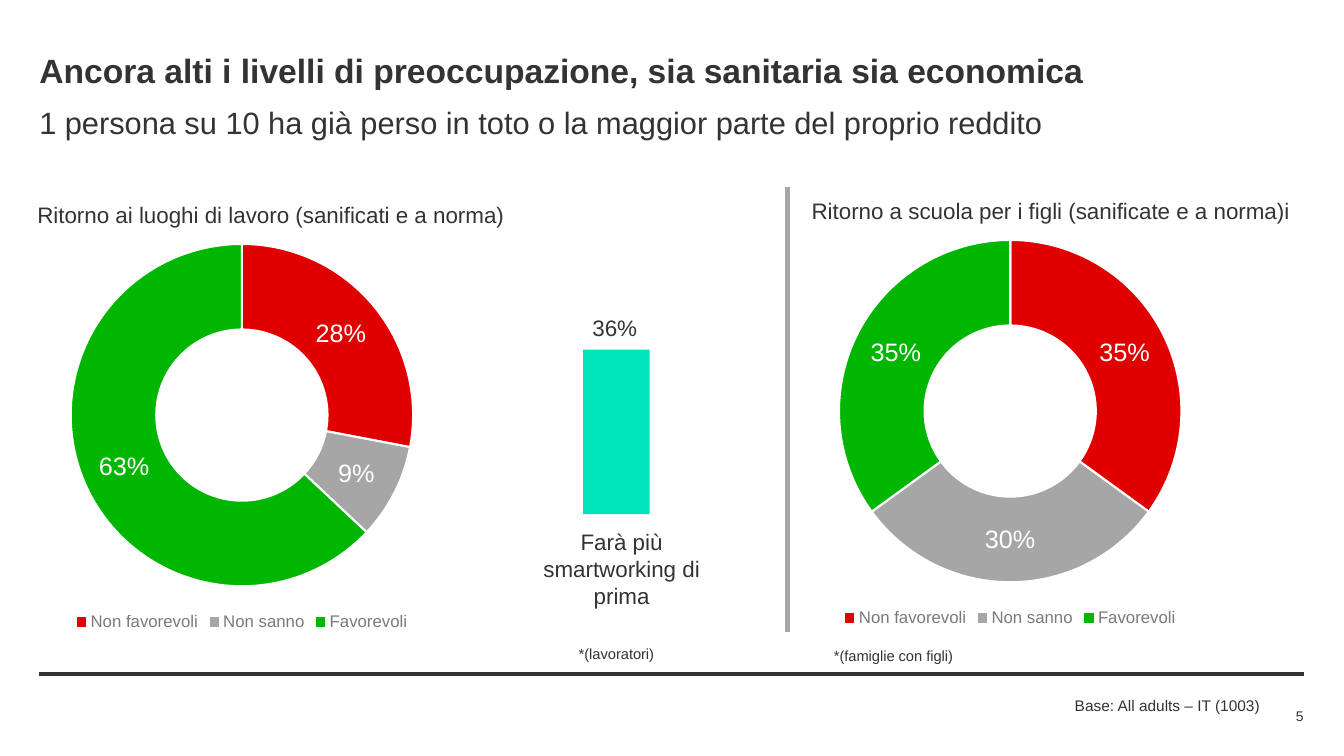
from lxml import etree
from pptx import Presentation
from pptx.chart.data import CategoryChartData as ChartData
from pptx.dml.color import RGBColor
from pptx.enum.chart import XL_CHART_TYPE as Kind, XL_LEGEND_POSITION as Place
from pptx.enum.shapes import MSO_CONNECTOR as Link, MSO_SHAPE as Form
from pptx.enum.text import MSO_ANCHOR as Anchor, MSO_AUTO_SIZE as Fit, PP_ALIGN as Align
from pptx.oxml import parse_xml
from pptx.oxml.ns import nsdecls, qn
from pptx.util import Inches, Pt

WIDE, HIGH = 13.33, 7.5
EDGE, SPAN = 0.39, 12.54
DARK, GREY, PALE = "333333", "A6A6A6", "7A7A7A"
RED, GREEN, TEAL, WHITE = "E10000", "00B600", "00E5BA", "FFFFFF"
VIEWS = ["Non favorevoli", "Non sanno", "Favorevoli"]


def color(code):
    return RGBColor.from_string(code)


def style(font, size, code=DARK, bold=False):
    font.name, font.size, font.bold = "Arial", Pt(size), bold
    font.color.rgb = color(code)


def fill(item, code):
    item.format.fill.solid()
    item.format.fill.fore_color.rgb = color(code)
    item.format.line.color.rgb = color(WHITE)
    item.format.line.width = Pt(1.5)


def write(shape, words, size, bold=False, align=Align.LEFT, anchor=Anchor.TOP,
          wrap=True, pad=0):
    frame = shape.text_frame
    frame.text = words
    frame.word_wrap = wrap
    frame.auto_size = Fit.NONE if wrap else Fit.SHAPE_TO_FIT_TEXT
    frame.vertical_anchor = anchor
    frame.margin_left = frame.margin_right = Inches(pad)
    frame.margin_top = frame.margin_bottom = Inches(pad / 2)
    para = frame.paragraphs[0]
    para.alignment, para.space_before = align, Pt(0)
    style(para.font, size, bold=bold)


def label(slide, box, words, size, **look):
    shape = slide.shapes.add_textbox(*map(Inches, box))
    write(shape, words, size, **look)


def rule(slide, start, end, code):
    line = slide.shapes.add_connector(Link.STRAIGHT, *map(Inches, start + end))
    line.line.color.rgb = color(code)
    line.line.width = Pt(3)
    etree.SubElement(line._element.spPr, qn("a:effectLst"))


def head(slide, left, top, width):
    title = slide.shapes.title
    title.left, title.top = Inches(left), Inches(top)
    title.width, title.height = Inches(width), Inches(0.44)
    write(title, "Ancora alti i livelli di preoccupazione, sia sanitaria sia economica",
          24, bold=True, anchor=Anchor.MIDDLE)
    label(slide, (left, top + 0.53, width, 0.43),
          "1 persona su 10 ha già perso in toto o la maggior parte del proprio reddito",
          22, anchor=Anchor.MIDDLE)


def ring(slide, left, top, shares):
    data = ChartData(number_format="0%")
    data.categories = VIEWS
    data.add_series("Series 1", shares)
    chart = slide.shapes.add_chart(
        Kind.DOUGHNUT, *map(Inches, (left, top, 5.36, 4.02)), data).chart
    style(chart.font, 10)
    chart.has_title = False
    chart.has_legend = True
    chart.legend.position = Place.BOTTOM
    chart.legend.include_in_layout = False
    style(chart.legend.font, 12, PALE)

    plot = chart.plots[0]
    plot.vary_by_categories = True
    plot._element.find(qn("c:holeSize")).set("val", "75")
    series = plot.series[0]
    for spot, code in enumerate((RED, GREY, GREEN)):
        fill(series.points[spot], code)
    tags = series.data_labels
    tags.show_value, tags.show_percentage = True, False
    tags.number_format, tags.number_format_is_linked = "0%", False
    style(tags.font, 18, WHITE)

    # Fixed plot area, as shares of the chart
    area = chart._chartSpace.chart.plotArea
    for old in area.findall(qn("c:layout")):
        area.remove(old)
    sides = "".join(f'<c:{key} val="{val}"/>' for key, val in (
        ("layoutTarget", "inner"), ("xMode", "edge"), ("yMode", "edge"),
        ("x", 0.18), ("y", 0.035), ("w", 0.64), ("h", 0.845)))
    area.insert(0, parse_xml(
        f'<c:layout {nsdecls("c")}><c:manualLayout>{sides}</c:manualLayout></c:layout>'))


def panel(slide, left, top, width, words, shift, shares):
    label(slide, (left, top, width, 0.27), words, 16, wrap=False)
    ring(slide, left + shift, top + 0.28, shares)


def column(slide, left, top, width):
    mid = left + width / 2
    label(slide, (mid - 0.29, top, 0.45, 0.27), "36%", 16, wrap=False)
    bar = slide.shapes.add_shape(
        Form.RECTANGLE, *map(Inches, (mid - 0.38, top + 0.35, 0.66, 1.63)))
    bar.shadow.inherit = False
    bar.fill.solid()
    bar.fill.fore_color.rgb = color(TEAL)
    bar.line.fill.background()
    label(slide, (left, top + 2.02, width, 1), "Farà più smartworking di prima",
          16, align=Align.CENTER, anchor=Anchor.MIDDLE, pad=0.1)


def foot(slide, left, top, width):
    right = left + width
    rule(slide, (left, top), (right, top), DARK)
    label(slide, (5.74, top - 0.29, 0.76, 0.18), "*(lavoratori)", 10.5, wrap=False)
    label(slide, (8.27, top - 0.27, 1.21, 0.18), "*(famiglie con figli)", 10.5, wrap=False)
    label(slide, (right - 2.27, top + 0.22, 1.9, 0.19),
          "Base: All adults – IT (1003)", 11, wrap=False)
    label(slide, (right - 1.06, top + 0.3, 1.06, 0.22), "5", 10,
          align=Align.RIGHT, anchor=Anchor.MIDDLE)


def main():
    deck = Presentation()
    deck.slide_width, deck.slide_height = Inches(WIDE), Inches(HIGH)
    slide = deck.slides.add_slide(deck.slide_layouts[5])
    head(slide, EDGE, 0.47, SPAN)
    # Work on the left, school on the right
    panel(slide, 0.37, 2, 4.69, "Ritorno ai luoghi di lavoro (sanificati e a norma)",
          -0.65, (0.28, 0.09, 0.63))
    column(slide, 5.09, 3.12, 2.15)
    rule(slide, (7.81, 6.27), (7.81, 1.86), GREY)
    panel(slide, 8.05, 1.96, 4.8, "Ritorno a scuola per i figli (sanificate e a norma)i",
          -0.71, (0.35, 0.3, 0.35))
    foot(slide, EDGE, 6.69, SPAN)
    deck.save("out.pptx")


if __name__ == "__main__":
    main()
